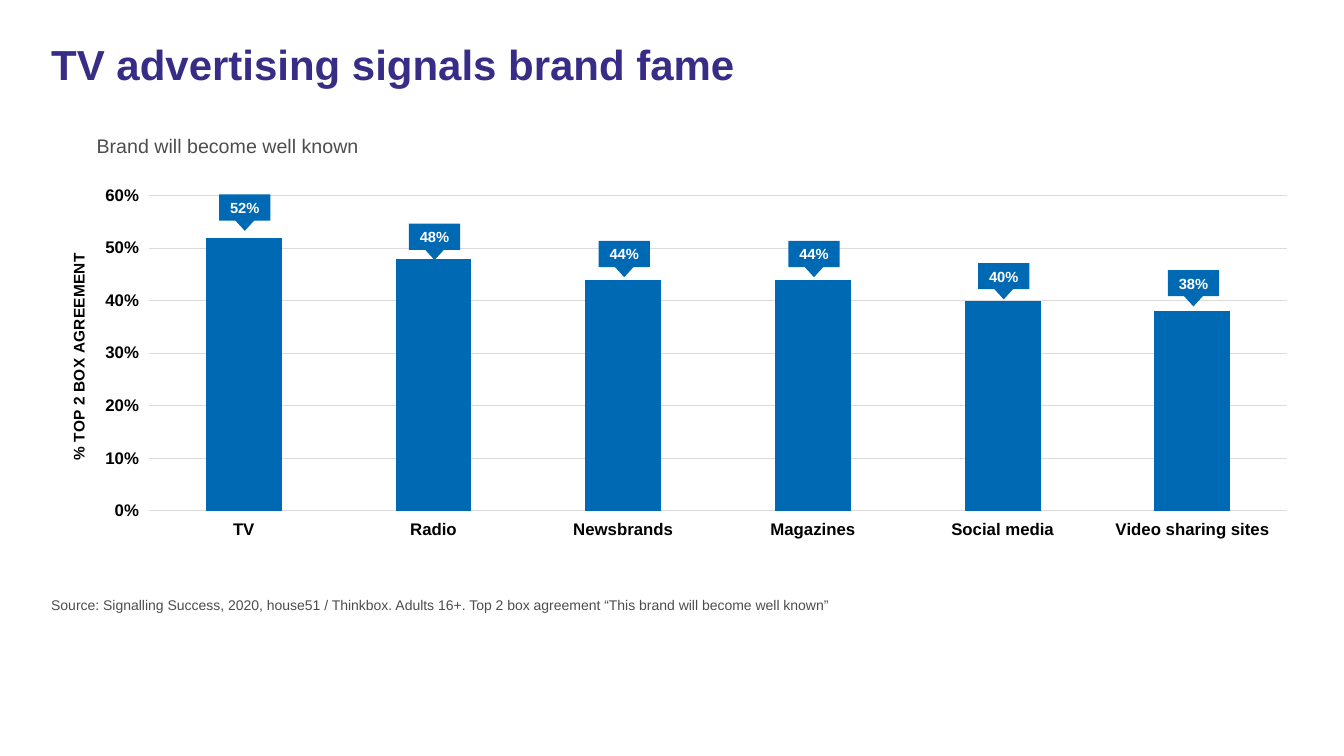
import pptx
import pptx.chart.data
import pptx.dml.color
import pptx.enum.chart
import pptx.enum.shapes
import pptx.enum.text
import pptx.oxml
import pptx.oxml.ns
import pptx.util
from pptx.util import Inches, Pt

TITLE = "TV advertising signals brand fame"
SUBTITLE = "Brand will become well known"
SOURCE = ("Source: Signalling Success, 2020, house51 / Thinkbox. Adults 16+. "
          "Top 2 box agreement “This brand will become well known”")
AXIS_TITLE = "% TOP 2 BOX AGREEMENT"
# medium, agreement, top of its callout in inches
MEDIA = [
    ("TV", 0.52, 1.93),
    ("Radio", 0.48, 2.22),
    ("Newsbrands", 0.44, 2.39),
    ("Magazines", 0.44, 2.39),
    ("Social media", 0.40, 2.61),
    ("Video sharing sites", 0.38, 2.68),
]
COLORS = {"title": "372D87", "text": "4D4D4D", "bar": "0069B4",
          "grid": "DBDBDB", "axis": "000000", "label": "FFFFFF"}
FONT = "Arial"

CHART_LEFT, CHART_TOP, CHART_WIDTH, CHART_HEIGHT = 0.4, 1.72, 12.38, 4.25
PLOT_X, PLOT_Y, PLOT_W, PLOT_H = 0.087, 0.052, 0.912, 0.736
LABEL_WIDTH, LABEL_HEIGHT = 0.51, 0.26
POINTER_WIDTH, POINTER_HEIGHT, POINTER_DROP = 0.2, 0.11, 0.25


def rgb(name):
    return pptx.dml.color.RGBColor.from_string(COLORS[name])


def set_font(font, size, color, bold=False):
    font.name, font.size, font.bold = FONT, Pt(size), bold
    font.color.rgb = rgb(color)


def add_text(slide, text, left, top, width, height, size, color, bold=False):
    box = slide.shapes.add_textbox(Inches(left), Inches(top), Inches(width), Inches(height))
    box.text_frame.word_wrap = True
    paragraph = box.text_frame.paragraphs[0]
    paragraph.text = text
    set_font(paragraph.font, size, color, bold)
    return paragraph


def set_layout(element, index, target, **fractions):
    """Fix a chart part's place, in fractions of the chart."""
    for old in element.findall(pptx.oxml.ns.qn("c:layout")):
        element.remove(old)
    inner = f'<c:layoutTarget val="{target}"/>' if target else ""
    inner += '<c:xMode val="edge"/><c:yMode val="edge"/>'
    inner += "".join(f'<c:{key} val="{value}"/>' for key, value in fractions.items())
    element.insert(index, pptx.oxml.parse_xml(
        f'<c:layout {pptx.oxml.ns.nsdecls("c")}><c:manualLayout>{inner}'
        '</c:manualLayout></c:layout>'))


def add_agreement_chart(slide):
    data = pptx.chart.data.CategoryChartData(number_format="0%")
    data.categories = [medium for medium, _, _ in MEDIA]
    data.add_series("Agreement", [share for _, share, _ in MEDIA])
    chart = slide.shapes.add_chart(
        pptx.enum.chart.XL_CHART_TYPE.COLUMN_CLUSTERED, Inches(CHART_LEFT), Inches(CHART_TOP),
        Inches(CHART_WIDTH), Inches(CHART_HEIGHT), data).chart
    chart.has_legend = chart.has_title = False
    set_font(chart.font, 18, "axis")

    bars = chart.plots[0]
    bars.gap_width, bars.overlap, bars.vary_by_categories = 150, -12, False
    bars.series[0].format.fill.solid()
    bars.series[0].format.fill.fore_color.rgb = rgb("bar")

    for axis in (chart.category_axis, chart.value_axis):
        axis.format.line.fill.background()
        set_font(axis.tick_labels.font, 12, "axis", True)

    shares = chart.value_axis
    shares.minimum_scale, shares.maximum_scale, shares.major_unit = 0, 0.6, 0.1
    shares.tick_labels.number_format = "0%"
    shares.tick_labels.number_format_is_linked = False
    shares.major_gridlines.format.line.color.rgb = rgb("grid")
    shares.major_gridlines.format.line.width = Pt(0.75)
    heading = shares.axis_title.text_frame
    heading.text = AXIS_TITLE
    set_font(heading.paragraphs[0].font, 11, "axis", True)
    body = shares.axis_title._element.find(".//" + pptx.oxml.ns.qn("a:bodyPr"))
    body.set("rot", "-5400000")
    body.set("vert", "horz")

    set_layout(shares.axis_title._element, 1, None, x=0.02, y=0.18)
    set_layout(chart._chartSpace.chart.plotArea, 0, "inner",
               x=PLOT_X, y=PLOT_Y, w=PLOT_W, h=PLOT_H)


def add_filled(group, preset, left, top, width, height):
    shape = group.shapes.add_shape(preset, Inches(left), Inches(top),
                                   Inches(width), Inches(height))
    shape.shadow.inherit = False
    shape.fill.solid()
    shape.fill.fore_color.rgb = rgb("bar")
    shape.line.fill.background()
    return shape


def add_callout(slide, share, center, top):
    presets = pptx.enum.shapes.MSO_SHAPE
    group = slide.shapes.add_group_shape()
    label = add_filled(group, presets.RECTANGLE, center - LABEL_WIDTH / 2, top,
                       LABEL_WIDTH, LABEL_HEIGHT)
    frame = label.text_frame
    frame.margin_left = frame.margin_right = Inches(0.04)
    frame.margin_top = frame.margin_bottom = Inches(0.05)
    frame.vertical_anchor = pptx.enum.text.MSO_ANCHOR.MIDDLE
    paragraph = frame.paragraphs[0]
    paragraph.text = f"{share:.0%}"
    paragraph.alignment = pptx.enum.text.PP_ALIGN.CENTER
    set_font(paragraph.font, 10.5, "label", True)
    pointer = add_filled(group, presets.ISOSCELES_TRIANGLE, center - POINTER_WIDTH / 2,
                         top + POINTER_DROP, POINTER_WIDTH, POINTER_HEIGHT)
    pointer.rotation = 180


def main():
    deck = pptx.Presentation()
    deck.slide_width, deck.slide_height = Inches(13.33), Inches(7.5)
    slide = deck.slides.add_slide(deck.slide_layouts[6])

    title = add_text(slide, TITLE, 0.41, 0.39, 12.4, 1.12, 30, "title", True)
    title.line_spacing = 0.9
    add_text(slide, SOURCE, 0.41, 5.87, 12.4, 0.33, 10, "text")
    add_agreement_chart(slide)
    add_text(slide, SUBTITLE, 0.86, 1.28, 8.83, 0.34, 14, "text")

    plot_left = CHART_LEFT + PLOT_X * CHART_WIDTH
    step = PLOT_W * CHART_WIDTH / len(MEDIA)
    for index, (_, share, top) in enumerate(MEDIA):
        add_callout(slide, share, plot_left + (index + 0.5) * step + 0.01, top)

    deck.save("out.pptx")


if __name__ == "__main__":
    main()
